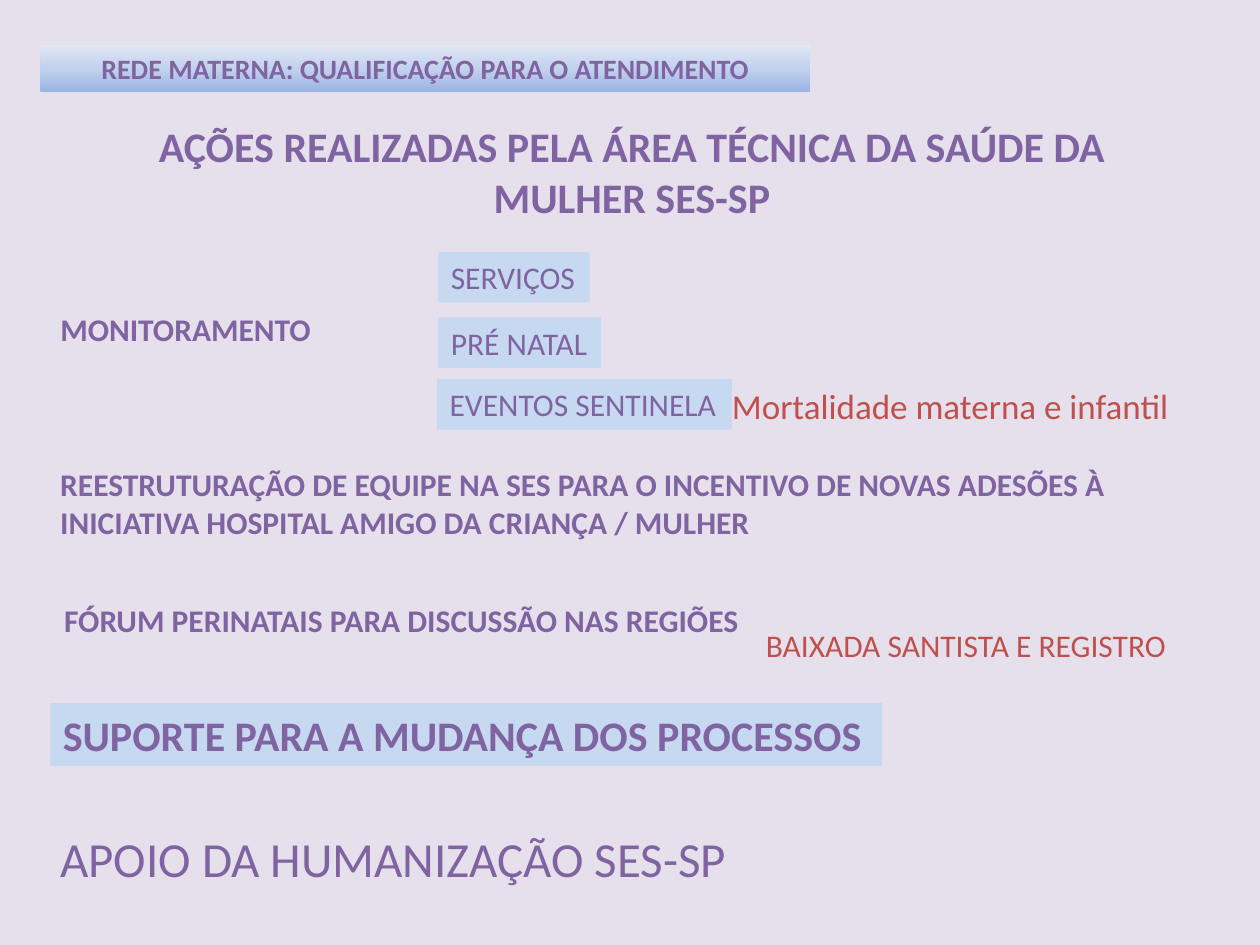
from copy import deepcopy

from pptx import Presentation
from pptx.dml.color import RGBColor
from pptx.enum.text import MSO_ANCHOR, MSO_AUTO_SIZE, PP_ALIGN
from pptx.util import Inches, Pt

TOP = MSO_ANCHOR.TOP
GROW = MSO_AUTO_SIZE.SHAPE_TO_FIT_TEXT
LEFT, CENTER = PP_ALIGN.LEFT, PP_ALIGN.CENTER

TITLE_ONLY = 5
FONT = "Calibri"
PURPLE, RED = "8064A2", "C0504D"
BACKGROUND, LILAC, PALE_BLUE = "E5E0EC", "E6E0EC", "C6D9F1"
BANNER_COLORS = ("9AB5E4", "C2D1ED", "E1E8F5")


def rgb(color):
    return RGBColor.from_string(color)


def fill_solid(fill, color):
    fill.solid()
    fill.fore_color.rgb = rgb(color)


def fill_banner(fill):
    """Fade upwards through the three banner colours."""
    fill.gradient()
    fill.gradient_angle = 90
    first_stop = fill.gradient_stops[0]._gs
    first_stop.addnext(deepcopy(first_stop))
    for index, (stop, color) in enumerate(zip(fill.gradient_stops, BANNER_COLORS)):
        stop.color.rgb = rgb(color)
        stop.position = index / 2


def write(box, text, size=18, color=PURPLE, bold=False, align=LEFT, wrap=False):
    frame = box.text_frame
    frame.word_wrap = wrap
    frame.auto_size = GROW
    frame.vertical_anchor = TOP
    para = frame.paragraphs[0]
    para.alignment = align
    span = para.add_run()
    span.text = text
    font = span.font
    font.name, font.size, font.bold = FONT, Pt(size), bold
    font.color.rgb = rgb(color)


def add_label(page, text, left, top, width, height=0.4, fill=None, **text_format):
    box = page.shapes.add_textbox(
        Inches(left), Inches(top), Inches(width), Inches(height))
    if fill:
        fill_solid(box.fill, fill)
    write(box, text, **text_format)
    return box


def set_title(page, text):
    title = page.shapes.title
    title.left, title.top = Inches(0.58), Inches(0.91)
    title.width, title.height = Inches(8.87), Inches(0.91)
    fill_solid(title.fill, LILAC)
    write(title, text, size=24, bold=True, align=CENTER, wrap=True)


def main():
    deck = Presentation()
    deck.slide_width, deck.slide_height = Inches(10), Inches(7.5)
    page = deck.slides.add_slide(deck.slide_layouts[TITLE_ONLY])
    fill_solid(page.background.fill, BACKGROUND)

    banner = add_label(page, "REDE MATERNA: QUALIFICAÇÃO PARA O ATENDIMENTO",
                       0.32, 0.36, 6.11, 0.37,
                       size=16, bold=True, align=CENTER, wrap=True)
    fill_banner(banner.fill)
    set_title(page, "AÇÕES REALIZADAS PELA ÁREA TÉCNICA DA SAÚDE DA MULHER SES-SP")

    add_label(page, "MONITORAMENTO", 0.38, 2.41, 2.21, fill=LILAC, bold=True)
    for text, left, top, width in (
        ("SERVIÇOS", 3.48, 2, 1.2),
        ("PRÉ NATAL", 3.48, 2.52, 1.29),
        ("EVENTOS SENTINELA", 3.47, 3.01, 2.34),
    ):
        add_label(page, text, left, top, width, fill=PALE_BLUE)

    add_label(page, "FÓRUM PERINATAIS PARA DISCUSSÃO NAS REGIÕES",
              0.41, 4.72, 5.61, fill=LILAC, bold=True)
    add_label(page, "SUPORTE PARA A MUDANÇA DOS PROCESSOS",
              0.4, 5.58, 6.6, 0.5, fill=PALE_BLUE, size=24, bold=True)
    add_label(page, "Mortalidade materna e infantil",
              5.71, 3, 3.71, 0.44, size=20, color=RED)
    add_label(page, "BAIXADA SANTISTA E REGISTRO", 5.98, 4.92, 3.4, color=RED)
    add_label(page, "APOIO DA HUMANIZAÇÃO SES-SP",
              0.38, 6.53, 5.55, 0.57, fill=BACKGROUND, size=28)
    add_label(page, "REESTRUTURAÇÃO DE EQUIPE NA SES PARA O INCENTIVO DE NOVAS "
              "ADESÕES À INICIATIVA HOSPITAL AMIGO DA CRIANÇA / MULHER",
              0.38, 3.64, 9.27, 0.71, fill=LILAC, bold=True, wrap=True)

    deck.save("out.pptx")


if __name__ == "__main__":
    main()
